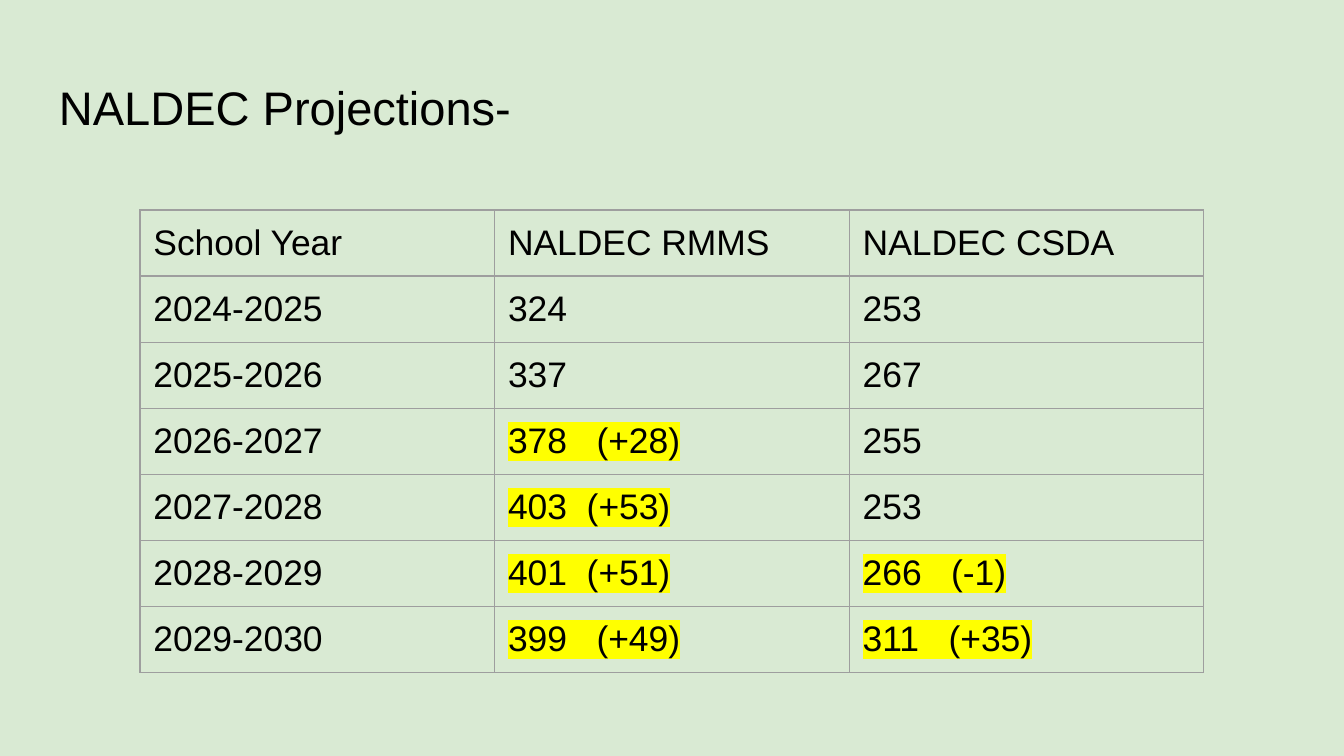
from dataclasses import dataclass

from lxml import etree
from pptx import Presentation
from pptx.dml.color import RGBColor
from pptx.enum import text
from pptx.oxml import ns
from pptx.util import Pt


@dataclass(frozen=True)
class Theme:
    font: str = "Arial"
    background: str = "D9EAD3"
    ink: str = "000000"
    grid: str = "9E9E9E"
    marker: str = "FFFF00"
    title_size: float = 25.2
    cell_size: float = 19
    grid_width: float = 0.75
    inset: float = 7.2
    cell_bottom_inset: float = 5.4


THEME = Theme()

PROJECTIONS = [
    ("School Year", "NALDEC RMMS", "NALDEC CSDA"),
    ("2024-2025", "324", "253"),
    ("2025-2026", "337", "267"),
    ("2026-2027", "378   (+28)", "255"),
    ("2027-2028", "403  (+53)", "253"),
    ("2028-2029", "401  (+51)", "266   (-1)"),
    ("2029-2030", "399   (+49)", "311   (+35)"),
]


def add_run(paragraph, wording, size):
    run = paragraph.add_run()
    run.text = wording
    run.font.size = Pt(size)
    run.font.color.rgb = RGBColor.from_string(THEME.ink)
    run.font.name = THEME.font
    return run


def set_insets(holder, bottom=THEME.inset):
    holder.margin_left = holder.margin_right = holder.margin_top = Pt(THEME.inset)
    holder.margin_bottom = Pt(bottom)


def add_color(parent, color):
    etree.SubElement(parent, ns.qn("a:srgbClr"), val=color)


def highlight(run):
    """Mark the run; the schema wants the highlight just before the font."""
    marker = etree.Element(ns.qn("a:highlight"))
    add_color(marker, THEME.marker)
    run.font._element.find(ns.qn("a:latin")).addprevious(marker)


def outline(cell):
    """Draw the four borders, which must precede the cell's fill."""
    properties = cell._tc.get_or_add_tcPr()
    for position, side in enumerate(("lnL", "lnR", "lnT", "lnB")):
        border = etree.Element(ns.qn(f"a:{side}"), w=str(Pt(THEME.grid_width)))
        add_color(etree.SubElement(border, ns.qn("a:solidFill")), THEME.grid)
        properties.insert(position, border)


def add_title(slide, wording, left, top, width, height):
    title = slide.shapes.add_textbox(Pt(left), Pt(top), Pt(width), Pt(height))
    frame = title.text_frame
    frame.word_wrap = True
    frame.vertical_anchor = text.MSO_ANCHOR.TOP
    set_insets(frame)
    add_run(frame.paragraphs[0], wording, THEME.title_size)


def add_projections(slide, rows, left, top, width, height):
    frame = slide.shapes.add_table(
        len(rows), len(rows[0]), Pt(left), Pt(top), Pt(width), Pt(height))
    table = frame.table
    table.first_row = table.horz_banding = False
    for column in table.columns:
        column.width = Pt(width / len(rows[0]))
    for row_index, row in enumerate(rows):
        table.rows[row_index].height = Pt(height / len(rows))
        for column_index, wording in enumerate(row):
            cell = table.cell(row_index, column_index)
            cell.fill.background()
            set_insets(cell, THEME.cell_bottom_inset)
            outline(cell)
            run = add_run(cell.text_frame.paragraphs[0], wording, THEME.cell_size)
            if "(" in wording:  # a change is shown in brackets
                highlight(run)


def main():
    deck = Presentation()
    deck.slide_width, deck.slide_height = Pt(720), Pt(405)
    slide = deck.slides.add_slide(deck.slide_layouts[6])
    backdrop = slide.background.fill
    backdrop.solid()
    backdrop.fore_color.rgb = RGBColor.from_string(THEME.background)
    add_title(slide, "NALDEC Projections-", 24.5, 35, 671, 45)
    add_projections(slide, PROJECTIONS, 75, 112.5, 570, 210)
    deck.save("out.pptx")


if __name__ == "__main__":
    main()
